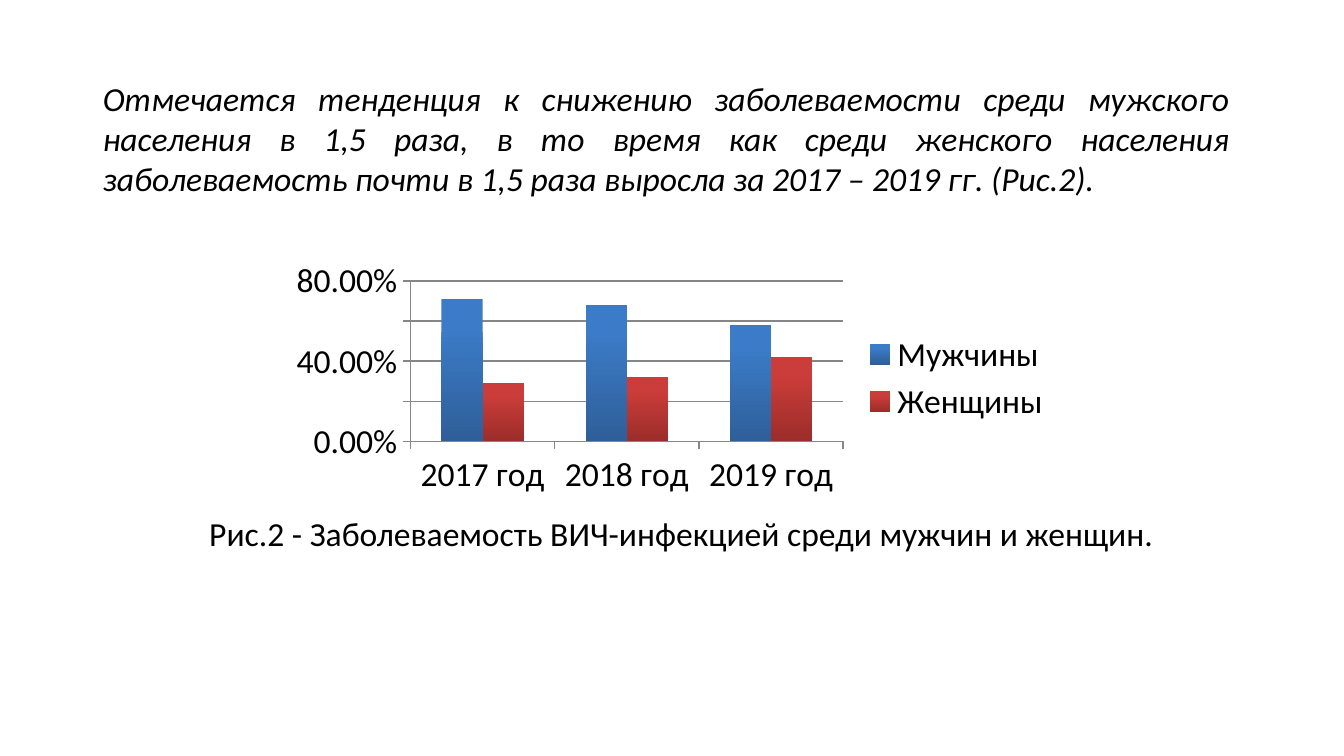
from pptx import Presentation
from pptx.chart.data import CategoryChartData
from pptx.dml.color import RGBColor
from pptx.enum.chart import XL_CHART_TYPE, XL_LEGEND_POSITION, XL_TICK_MARK
from pptx.enum.text import MSO_AUTO_SIZE, PP_ALIGN
from pptx.util import Pt

FONT = "Calibri"
SIZE = 18
BLACK = "000000"
GREY = "868686"
YEARS = ["2017 год", "2018 год", "2019 год"]
SERIES = [
    ("Мужчины", [0.71, 0.68, 0.58], "3C7BC7", "2E5F99"),
    ("Женщины", [0.29, 0.32, 0.42], "CB3D3A", "9B2D2A"),
]


def color(value):
    """Turn a hex string into a colour."""
    return RGBColor.from_string(value)


def style_font(font, italic=False):
    """Apply the slide's common text style."""
    font.name = FONT
    font.size = Pt(SIZE)
    font.bold = False
    font.italic = italic
    font.color.rgb = color(BLACK)


def add_text(s, text, x, y, w, h, align=PP_ALIGN.LEFT, italic=False):
    """Add a wrapped one-paragraph text box."""
    tf = s.shapes.add_textbox(Pt(x), Pt(y), Pt(w), Pt(h)).text_frame
    tf.word_wrap = True
    tf.auto_size = MSO_AUTO_SIZE.SHAPE_TO_FIT_TEXT
    p = tf.paragraphs[0]
    p.text = text
    p.alignment = align
    style_font(p.runs[0].font, italic)


def shade(fill, top, bottom):
    """Fill a bar with a gradient that darkens downwards."""
    fill.gradient()
    fill.gradient_angle = 270
    stops = zip(fill.gradient_stops, (0.2, 1), (top, bottom))
    for stop, position, value in stops:
        stop.position = position
        stop.color.rgb = color(value)


def style_axis(axis):
    """Give an axis grey lines and outside ticks."""
    axis.major_tick_mark = XL_TICK_MARK.OUTSIDE
    axis.minor_tick_mark = XL_TICK_MARK.NONE
    axis.format.line.color.rgb = color(GREY)
    style_font(axis.tick_labels.font)


def add_columns(s, x, y, w, h):
    """Add the clustered column chart of shares by sex."""
    data = CategoryChartData(number_format="0.00%")
    data.categories = YEARS
    for name, values, _, _ in SERIES:
        data.add_series(name, values)
    chart = s.shapes.add_chart(XL_CHART_TYPE.COLUMN_CLUSTERED,
                               Pt(x), Pt(y), Pt(w), Pt(h), data).chart
    style_font(chart.font)
    chart.has_title = False
    chart.has_legend = True
    chart.legend.position = XL_LEGEND_POSITION.RIGHT
    chart.legend.include_in_layout = False
    style_font(chart.legend.font)
    for axis in (chart.category_axis, chart.value_axis):
        style_axis(axis)
    axis = chart.value_axis
    axis.minimum_scale, axis.maximum_scale, axis.major_unit = 0, 0.8, 0.2
    axis.tick_labels.number_format = "0.00%"
    axis.tick_labels.number_format_is_linked = False
    axis.major_gridlines.format.line.color.rgb = color(GREY)
    plot = chart.plots[0]
    plot.gap_width = 150
    plot.overlap = 0
    plot.vary_by_categories = False
    for series, (_, _, top, bottom) in zip(plot.series, SERIES):
        series.invert_if_negative = False
        shade(series.format.fill, top, bottom)


def main():
    """Build and save the slide."""
    prs = Presentation()
    prs.slide_width, prs.slide_height = Pt(720), Pt(405)
    s = prs.slides.add_slide(prs.slide_layouts[6])
    add_text(s, "Отмечается тенденция к снижению заболеваемости среди мужского "
             "населения в 1,5 раза, в то время как среди женского населения "
             "заболеваемость почти в 1,5 раза выросла за 2017 – 2019 гг. (Рис.2).",
             48, 38, 618, 72.7, PP_ALIGN.JUSTIFY, italic=True)
    add_columns(s, 150.5, 137, 420, 131)
    add_text(s, "Рис.2 - Заболеваемость ВИЧ-инфекцией среди мужчин и женщин.",
             105, 271, 521, 29)
    prs.save("out.pptx")


if __name__ == "__main__":
    main()
